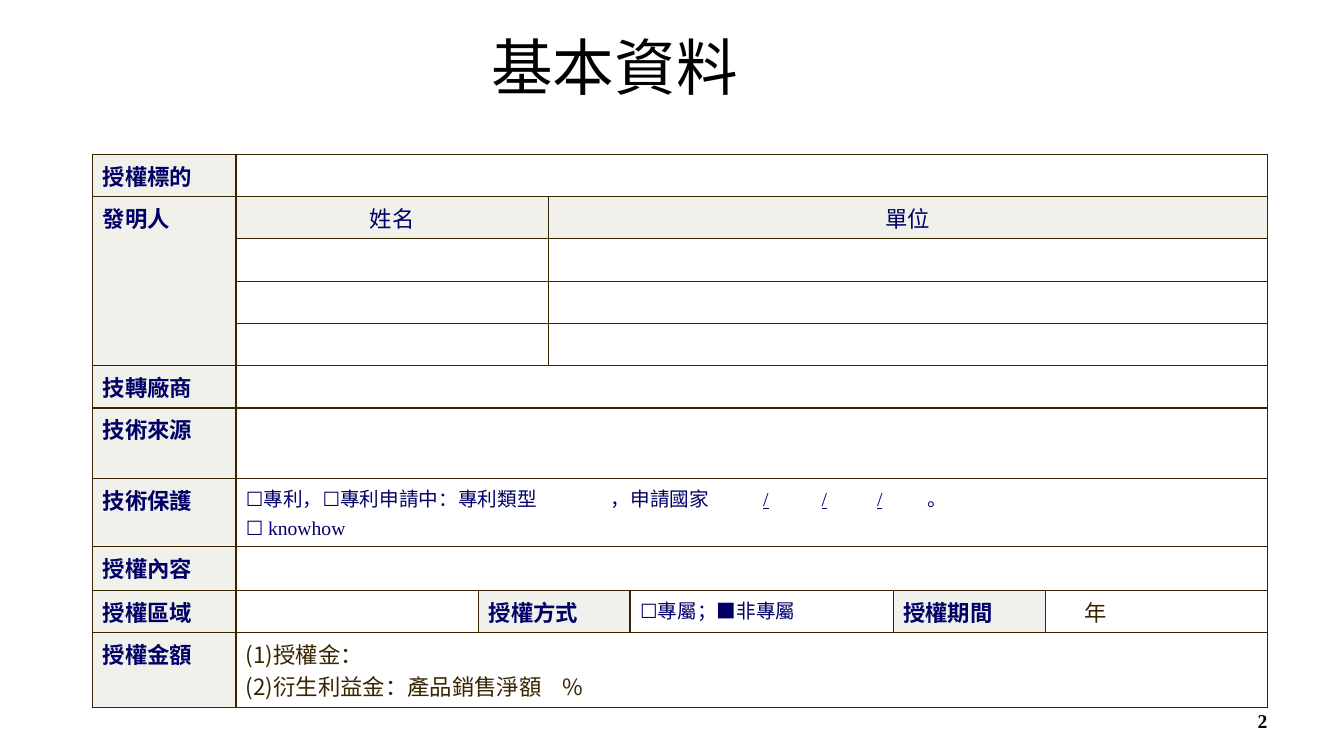
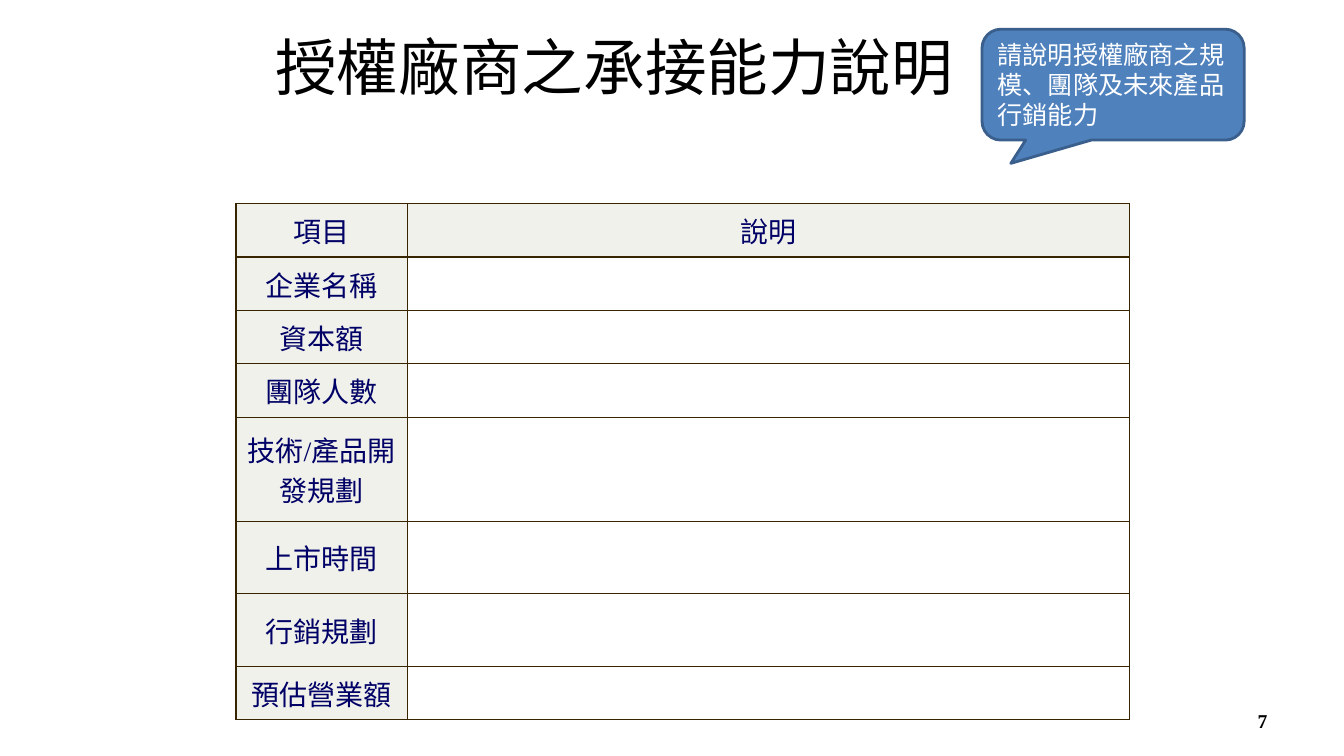
from lxml import etree
from pptx import Presentation
from pptx.dml.color import RGBColor
from pptx.enum.shapes import MSO_SHAPE
from pptx.enum.text import MSO_ANCHOR, PP_ALIGN
from pptx.oxml.ns import qn
from pptx.util import Inches, Pt

LEFT, CENTER, RIGHT = PP_ALIGN.LEFT, PP_ALIGN.CENTER, PP_ALIGN.RIGHT
TOP, MIDDLE = MSO_ANCHOR.TOP, MSO_ANCHOR.MIDDLE
CALLOUT = MSO_SHAPE.ROUNDED_RECTANGULAR_CALLOUT

BLACK = RGBColor(0x00, 0x00, 0x00)
WHITE = RGBColor(0xFF, 0xFF, 0xFF)
NAVY = RGBColor(0x00, 0x00, 0x66)
BROWN = RGBColor(0x37, 0x25, 0x00)
LABEL_FILL = RGBColor(0xF1, 0xF1, 0xEB)
SUBLABEL_FILL = RGBColor(0xF0, 0xF0, 0xEC)
CALLOUT_FILL = RGBColor(0x4F, 0x81, 0xBD)
CALLOUT_LINE = RGBColor(0x3A, 0x5F, 0x8C)

SERIF, SANS, HEADING = "Times New Roman", "Arial", "Calibri"
CHINESE, SYMBOL, GOTHIC = "Noto Sans CJK TC", "Noto Sans CJK JP", "Noto Sans CJK SC"

TITLE_BOX = (2.09, 0.21, 8.01, 0.88)
NUMBER_BOX = (9.56, 6.95, 3.11, 0.4)

LABEL = dict(size=16, bold=True, fill=LABEL_FILL)
ARIAL_LABEL = dict(LABEL, font=SANS)
SUBLABEL = dict(ARIAL_LABEL, fill=SUBLABEL_FILL)
HEADER = dict(size=16, fill=LABEL_FILL, align=CENTER)
SMALL = dict(size=14)
BODY = dict(size=16, color=BROWN)
CAPACITY = dict(size=20, fill=LABEL_FILL, align=CENTER, anchor=MIDDLE)

PROTECTION = [
    [("☐", SYMBOL), "專利，", ("☐", SYMBOL), "專利申請中：專利類型",
     ("\t", SERIF, True), "，申請國家", ("\t/\t/\t/\t", SERIF, True), ("。", CHINESE)],
    [("☐ ", SYMBOL), "knowhow"],
]
LICENCE_TYPE = [["☐專屬；", ("■", SYMBOL), "非專屬"]]
FEES = ["(1)授權金：", "(2)衍生利益金：產品銷售淨額\t%"]

BASIC_TABLE = dict(
    left=0.92, top=1.53,
    columns=[1.42, 2.41, 0.69, 0.81, 2.61, 1.51, 2.2],
    rows=[0.42] * 6 + [0.7, 0.67, 0.44, 0.42, 0.74],
    merges=[(row, 1, row, 6) for row in (0, 5, 6, 7, 8, 10)]
    + [(row, first, row, last) for row in range(1, 5) for first, last in ((1, 2), (3, 6))]
    + [(1, 0, 4, 0), (9, 2, 9, 3)],
    cells={
        (0, 0): ("授權標的", LABEL),
        (1, 0): ("發明人", LABEL),
        (1, 1): ("姓名", HEADER),
        (1, 3): ("單位", HEADER),
        (5, 0): ("技轉廠商", LABEL),
        (6, 0): ("技術來源", LABEL),
        (7, 0): ("技術保護", LABEL),
        (7, 1): (PROTECTION, dict(SMALL, tabs=[3.62, 5.13, 5.71, 6.26, 6.76])),
        (8, 0): ("授權內容", ARIAL_LABEL),
        (9, 0): ("授權區域", ARIAL_LABEL),
        (9, 2): ("授權方式", SUBLABEL),
        (9, 4): (LICENCE_TYPE, SMALL),
        (9, 5): ("授權期間", SUBLABEL),
        (9, 6): ("年", dict(BODY, indent=0.29)),
        (10, 0): ("授權金額", ARIAL_LABEL),
        (10, 1): (FEES, dict(BODY, font=GOTHIC, tabs=[3.14])),
    },
)

CAPACITY_ITEMS = ["項目", "企業名稱", "資本額", "團隊人數", "技術/產品開發規劃",
                  "上市時間", "行銷規劃", "預估營業額"]
CAPACITY_TABLE = dict(
    left=2.34, top=2.02,
    columns=[1.7, 7.16],
    rows=[0.53] * 4 + [1.03, 0.72, 0.72, 0.53],
    merges=[],
    cells={(0, 1): ("說明", CAPACITY),
           **{(row, 0): (item, CAPACITY) for row, item in enumerate(CAPACITY_ITEMS)}},
)

SLIDES = [
    dict(title="基本資料", number="2", table=BASIC_TABLE),
    dict(title="授權廠商之承接能力說明", number="7", table=CAPACITY_TABLE,
         callout="請說明授權廠商之規模、團隊及未來產品行銷能力"),
]


def write_text(frame, text, size=16, font=SERIF, color=NAVY, bold=False,
               align=LEFT, tabs=(), indent=0, spacing=None):
    lines = [text] if isinstance(text, str) else text
    for index, line in enumerate(lines):
        paragraph = frame.paragraphs[0] if index == 0 else frame.add_paragraph()
        paragraph.alignment = align
        if spacing:
            paragraph.line_spacing = Pt(spacing)
        properties = paragraph._p.get_or_add_pPr()
        if indent:
            properties.set("marL", str(Inches(indent)))
            properties.set("indent", "0")
        if tabs:
            stops = etree.SubElement(properties, qn("a:tabLst"))
            for position in tabs:
                etree.SubElement(stops, qn("a:tab"), pos=str(Inches(position)), algn="l")
        for piece in [line] if isinstance(line, str) else line:
            words, face, underline = ((piece, font, False) if isinstance(piece, str)
                                      else (*piece, False)[:3])
            run = paragraph.add_run()
            run.text = words
            run.font.size = Pt(size)
            run.font.bold = bold
            run.font.underline = underline
            run.font.color.rgb = color
            run.font.name = face
            east_asian = face if face in (SYMBOL, GOTHIC) else CHINESE
            etree.SubElement(run.font._element, qn("a:ea"), typeface=east_asian)


def add_text_box(slide, box, text, **text_format):
    frame = slide.shapes.add_textbox(*map(Inches, box)).text_frame
    frame.word_wrap = True
    frame.vertical_anchor = MIDDLE
    write_text(frame, text, **text_format)


def add_borders(cell):
    properties = cell._tc.get_or_add_tcPr()
    for index, side in enumerate(("lnL", "lnR", "lnT", "lnB")):
        line = etree.Element(qn("a:" + side), w=str(Pt(1)))
        fill = etree.SubElement(line, qn("a:solidFill"))
        etree.SubElement(fill, qn("a:srgbClr"), val=str(BROWN))
        properties.insert(index, line)


def add_grid(slide, left, top, columns, rows, merges, cells):
    frame = slide.shapes.add_table(len(rows), len(columns), Inches(left), Inches(top),
                                   Inches(sum(columns)), Inches(sum(rows)))
    table = frame.table
    table.first_row = table.horz_banding = False
    for column, width in zip(table.columns, columns):
        column.width = Inches(width)
    for row, height in zip(table.rows, rows):
        row.height = Inches(height)
    for first_row, first_column, last_row, last_column in merges:
        table.cell(first_row, first_column).merge(table.cell(last_row, last_column))
    for row in range(len(rows)):
        for column in range(len(columns)):
            cell = table.cell(row, column)
            text, cell_format = cells.get((row, column), ("", {}))
            text_format = dict(cell_format)
            cell.fill.solid()
            cell.fill.fore_color.rgb = text_format.pop("fill", WHITE)
            cell.vertical_anchor = text_format.pop("anchor", TOP)
            add_borders(cell)
            if text:
                write_text(cell.text_frame, text, **text_format)


def add_callout(slide, text):
    shape = slide.shapes.add_shape(CALLOUT, *map(Inches, (9.74, 0.29, 2.6, 1.1)))
    for index, value in enumerate((-0.39, 0.71, 0.17)):
        shape.adjustments[index] = value
    shape.shadow.inherit = False
    shape.fill.solid()
    shape.fill.fore_color.rgb = CALLOUT_FILL
    shape.line.color.rgb = CALLOUT_LINE
    shape.line.width = Pt(2)
    shape.text_frame.word_wrap = True
    shape.text_frame.vertical_anchor = MIDDLE
    write_text(shape.text_frame, text, size=18, font=GOTHIC, color=WHITE, spacing=21.5)


def main():
    presentation = Presentation()
    presentation.slide_width = Inches(13.33)
    presentation.slide_height = Inches(7.5)
    for content in SLIDES:
        slide = presentation.slides.add_slide(presentation.slide_layouts[6])
        add_text_box(slide, TITLE_BOX, content["title"], size=44, font=HEADING,
                     color=BLACK, align=CENTER)
        add_text_box(slide, NUMBER_BOX, content["number"], size=14, color=BLACK,
                     bold=True, align=RIGHT)
        add_grid(slide, **content["table"])
        if "callout" in content:
            add_callout(slide, content["callout"])
    presentation.save("out.pptx")


if __name__ == "__main__":
    main()
